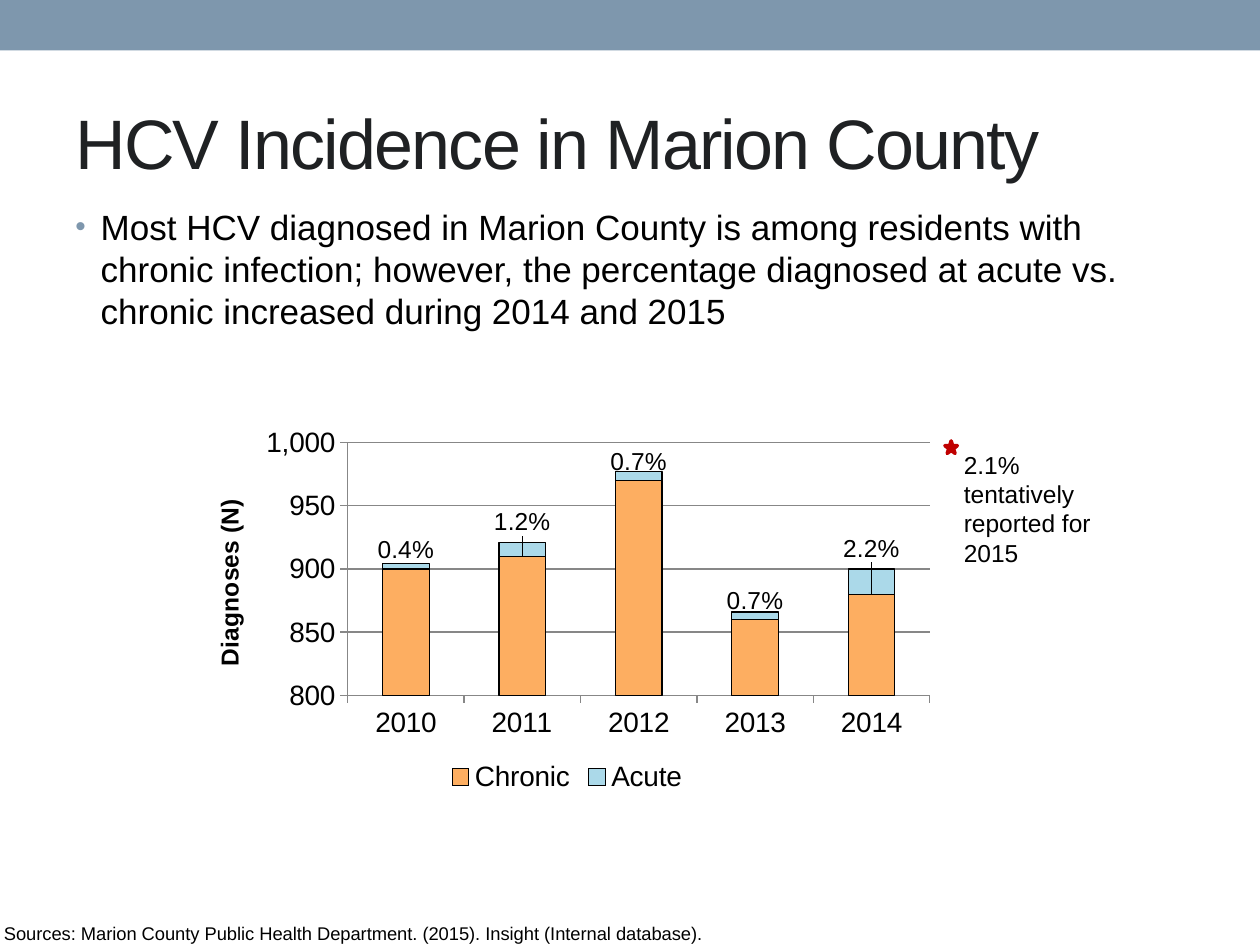
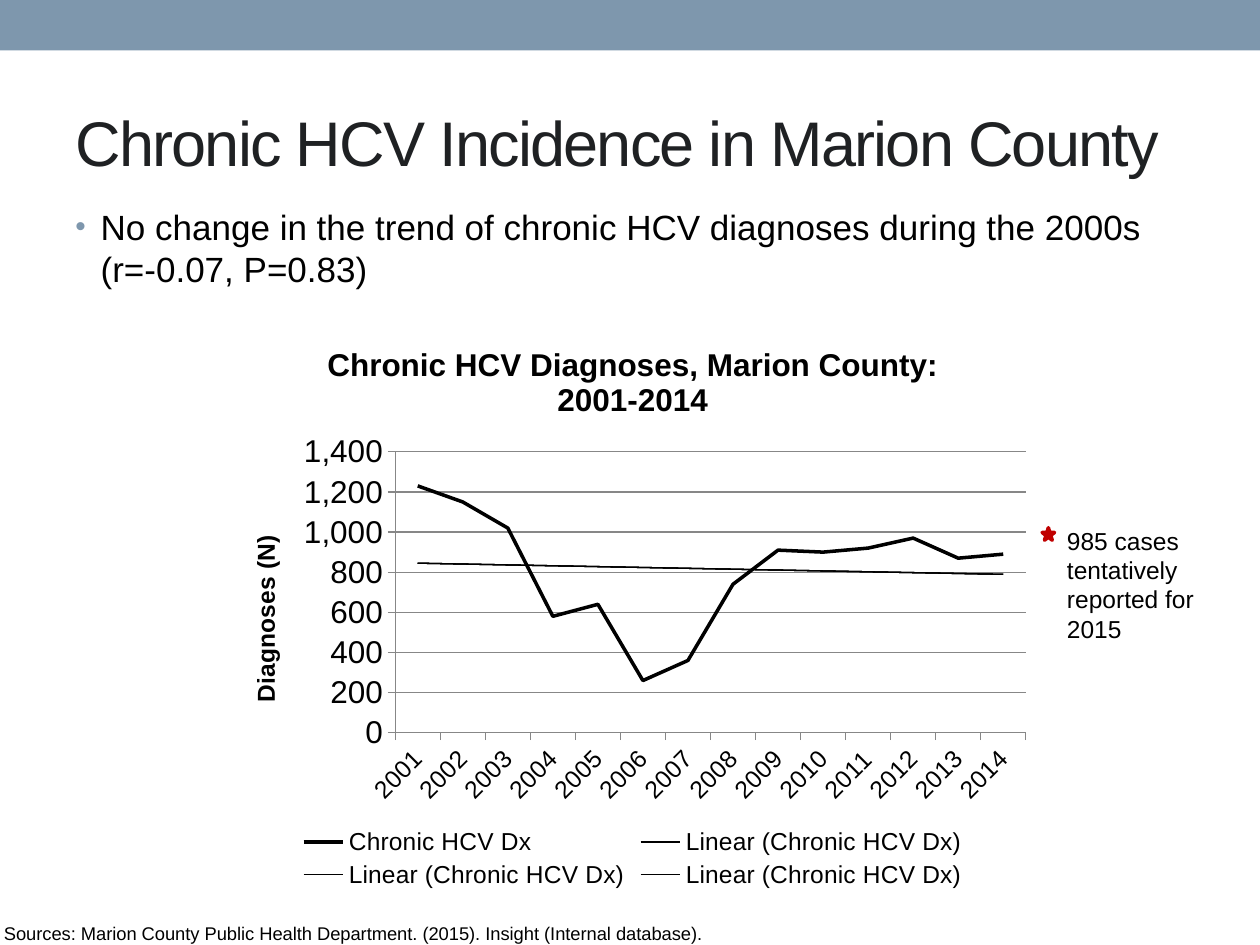
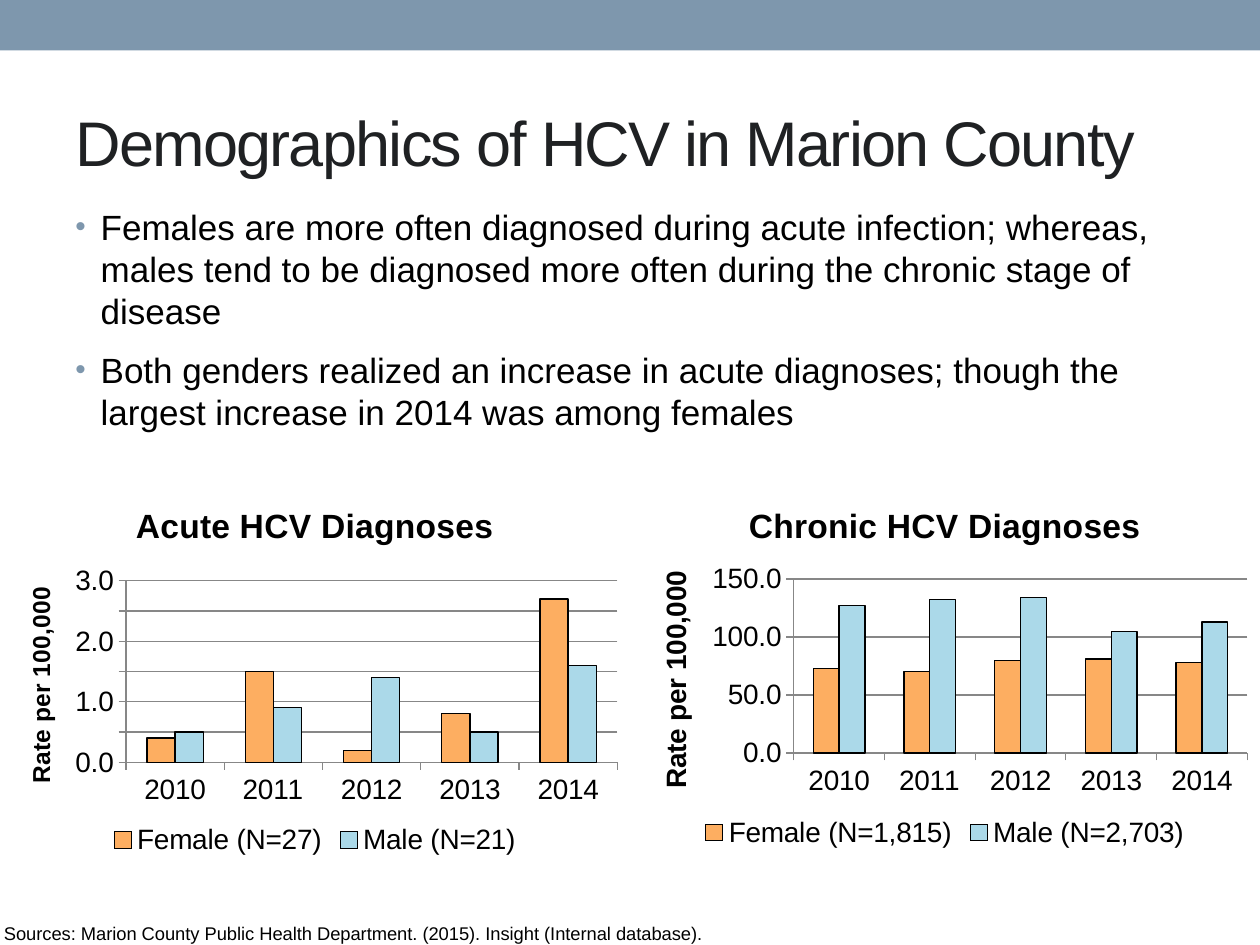
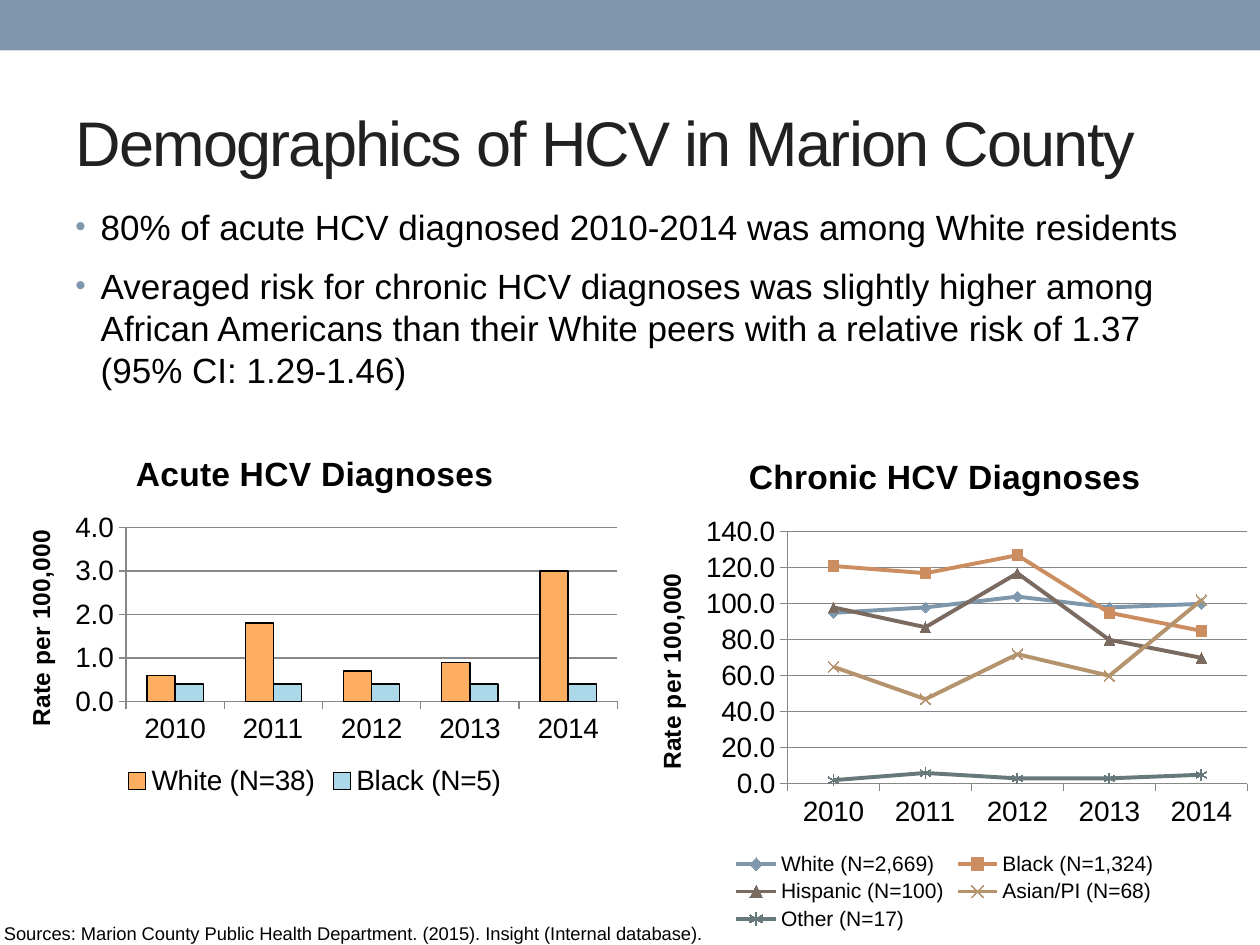
import pptx
import pptx.chart.data
import pptx.dml.color
import pptx.enum.chart
import pptx.enum.shapes
import pptx.enum.text
import pptx.oxml
import pptx.oxml.ns
import pptx.util
from pptx.util import Cm, Pt

FONT = "Arial"
BLACK, SLATE, INK, RED, GRID = "000000", "7E97AD", "1F2123", "C00000", "878787"
STAGE_COLORS = ("FDAE61", "ABD9E9")
RACE_COLORS = (SLATE, "CC8E60", "7A6A60", "B4936D", "67787B")
SLIDE_WIDTH, SLIDE_HEIGHT = 25.4, 19.05
HALF = SLIDE_WIDTH / 2
YEARS = [str(year) for year in range(2010, 2015)]
SOURCE = "Sources: Marion County Public Health Department. (2015). Insight (Internal database)."

CHART = pptx.enum.chart.XL_CHART_TYPE
MARKER = pptx.enum.chart.XL_MARKER_STYLE
RACE_MARKERS = (MARKER.DIAMOND, MARKER.SQUARE, MARKER.TRIANGLE, MARKER.X, MARKER.STAR)


def rgb(value):
    """Turn a hex string into a colour."""
    return pptx.dml.color.RGBColor.from_string(value)


def xml(markup):
    """Parse markup that uses the chart and drawing prefixes."""
    head, mark, tail = markup.partition(">")
    close = "/" if head.endswith("/") else ""
    names = pptx.oxml.ns.nsdecls("a", "c")
    return pptx.oxml.parse_xml(f"{head.rstrip('/')} {names}{close}{mark}{tail}")


def style_font(font, size, color=BLACK, bold=None):
    """Give a font the deck's face with a size and colour."""
    font.name, font.size, font.bold = FONT, Pt(size), bold
    font.color.rgb = rgb(color)


def style_line(line, color, width):
    """Give a line a colour and a width in points."""
    line.color.rgb = rgb(color)
    line.width = Pt(width)


def add_run(paragraph, text, size, color=BLACK, bold=None):
    """Add one styled run to a paragraph."""
    run = paragraph.add_run()
    run.text = text
    style_font(run.font, size, color, bold)
    return run


def add_frame(slide, box):
    """Add a wrapping text box and return its text frame."""
    frame = slide.shapes.add_textbox(*map(Cm, box)).text_frame
    frame.word_wrap = True
    return frame


def add_preset(slide, preset, box, color):
    """Add a flat preset shape filled with one colour."""
    shape = slide.shapes.add_shape(preset, *map(Cm, box))
    shape.shadow.inherit = False
    shape.fill.solid()
    shape.fill.fore_color.rgb = rgb(color)
    shape.line.fill.background()
    return shape


def add_heading(slide, box, text, size):
    """Place the slide title in its box."""
    frame = add_frame(slide, box)
    frame.vertical_anchor = pptx.enum.text.MSO_ANCHOR.MIDDLE
    run = add_run(frame.paragraphs[0], text, size, INK)
    run.font._element.set("spc", "-100")


def add_bullets(slide, box, points):
    """Place the bulleted findings in their box."""
    frame = add_frame(slide, box)
    for index, point in enumerate(points):
        paragraph = frame.add_paragraph() if index else frame.paragraphs[0]
        paragraph.space_before, paragraph.space_after = Pt(4), Pt(6)
        properties = paragraph._p.get_or_add_pPr()
        properties.set("marL", str(Cm(0.51)))
        properties.set("indent", str(-Cm(0.51)))
        properties.append(xml(f'<a:buClr><a:srgbClr val="{SLATE}"/></a:buClr>'))
        properties.append(xml('<a:buSzPct val="85000"/>'))
        properties.append(xml(f'<a:buFont typeface="{FONT}"/>'))
        properties.append(xml('<a:buChar char="•"/>'))
        add_run(paragraph, point, 20)


def add_source(slide, box):
    """Place the source line at the foot of the slide."""
    frame = add_frame(slide, box)
    frame.margin_left = frame.margin_top = frame.margin_right = frame.margin_bottom = 0
    frame.auto_size = pptx.enum.text.MSO_AUTO_SIZE.SHAPE_TO_FIT_TEXT
    add_run(frame.paragraphs[0], SOURCE, 10.5)


def add_star_note(slide, box, star_offset, text):
    """Place a note with a red star offset from its corner."""
    left, top = box[:2]
    across, down = star_offset
    star = add_preset(slide, pptx.enum.shapes.MSO_SHAPE.STAR_5_POINT,
                      (left + across, top + down, 0.25, 0.25), RED)
    style_line(star.line, RED, 2.08)
    frame = add_frame(slide, box)
    frame.auto_size = pptx.enum.text.MSO_AUTO_SIZE.SHAPE_TO_FIT_TEXT
    add_run(frame.paragraphs[0], text, 14)


def start_slide(deck, title, title_size, points, body_height):
    """Add a slide with the band, title, findings and source."""
    slide = deck.slides.add_slide(deck.slide_layouts[6])
    add_preset(slide, pptx.enum.shapes.MSO_SHAPE.RECTANGLE, (0, 0, SLIDE_WIDTH, 1.02), SLATE)
    add_heading(slide, (1.27, 1.48, 23.06, 2.74), title, title_size)
    add_bullets(slide, (1.27, 4.01, 22.86, body_height), points)
    return slide


def style_axes(chart, label, label_size, scale, number_format):
    """Style both axes and set the value scale (low, high, step)."""
    values = chart.value_axis
    values.minimum_scale, values.maximum_scale, values.major_unit = scale
    values.tick_labels.number_format = number_format
    values.tick_labels.number_format_is_linked = False
    style_line(values.major_gridlines.format.line, GRID, 0.75)
    for axis in (values, chart.category_axis):
        axis.major_tick_mark = pptx.enum.chart.XL_TICK_MARK.OUTSIDE
        axis.minor_tick_mark = pptx.enum.chart.XL_TICK_MARK.NONE
        style_line(axis.format.line, GRID, 0.75)
    frame = values.axis_title.text_frame
    add_run(frame.paragraphs[0], label, label_size, bold=True)
    frame._txBody.bodyPr.set("rot", "-5400000")
    frame._txBody.bodyPr.set("vert", "horz")


def set_plot_area(chart, area):
    """Fix the inner plot area as fractions of the chart."""
    parts = "".join(f'<c:{key} val="{value}"/>' for key, value in zip("xywh", area))
    layout = xml('<c:layout><c:manualLayout><c:layoutTarget val="inner"/>'
                 f'<c:xMode val="edge"/><c:yMode val="edge"/>{parts}'
                 '</c:manualLayout></c:layout>')
    plot_area = chart._chartSpace.chart.plotArea
    for old in plot_area.findall(pptx.oxml.ns.qn("c:layout")):
        plot_area.remove(old)
    plot_area.insert(0, layout)


def add_chart(slide, box, kind, years, groups, area, scale, label, title=None,
              title_size=19.2, size=16, label_size=14, legend_size=16,
              number_format="#,##0.0"):
    """Place a chart with its axes, title and legend in a box."""
    data = pptx.chart.data.CategoryChartData()
    data.categories = years
    for name, values in groups:
        data.add_series(name, values)
    chart = slide.shapes.add_chart(kind, *map(Cm, box), data).chart
    style_font(chart.font, size)
    chart.has_title = title is not None
    if title:
        add_run(chart.chart_title.text_frame.paragraphs[0], title, title_size, bold=True)
    chart.has_legend = True
    chart.legend.position = pptx.enum.chart.XL_LEGEND_POSITION.BOTTOM
    chart.legend.include_in_layout = False
    style_font(chart.legend.font, legend_size)
    chart.plots[0].vary_by_categories = False
    style_axes(chart, label, label_size, scale, number_format)
    set_plot_area(chart, area)
    return chart


def style_columns(chart, overlap=0):
    """Colour outlined columns and set their spacing."""
    plot = chart.plots[0]
    plot.gap_width, plot.overlap = 150, overlap
    for group, color in zip(plot.series, STAGE_COLORS):
        group.format.fill.solid()
        group.format.fill.fore_color.rgb = rgb(color)
        style_line(group.format.line, BLACK, 0.75)


def label_shares(acute, shares):
    """Label acute columns with their share, raised by a fraction, without leader lines."""
    for index, (share, rise) in enumerate(shares):
        label = acute.points[index].data_label
        add_run(label.text_frame.paragraphs[0], share, 14)
        label.position = pptx.enum.chart.XL_LABEL_POSITION.INSIDE_BASE
        if rise:
            element = label._get_or_add_dLbl()
            element.find(pptx.oxml.ns.qn("c:idx")).addnext(xml(
                '<c:layout><c:manualLayout><c:x val="0"/>'
                f'<c:y val="{-rise}"/></c:manualLayout></c:layout>'))
    acute._element.find(pptx.oxml.ns.qn("c:dLbls")).append(xml(
        '<c:extLst><c:ext uri="{CE6537A1-D6FC-4f65-9D91-7224C49458BB}" '
        'xmlns:c15="http://schemas.microsoft.com/office/drawing/2012/chart">'
        '<c15:showLeaderLines val="0"/></c:ext></c:extLst>'))


def add_trends(chart, widths):
    """Add a linear trend per width; the legend lists the last one."""
    categories = chart.plots[0].series[0]._element.find(pptx.oxml.ns.qn("c:cat"))
    for width in widths:
        categories.addprevious(xml(
            f'<c:trendline><c:spPr><a:ln w="{Pt(width)}"><a:solidFill>'
            f'<a:srgbClr val="{BLACK}"/></a:solidFill></a:ln></c:spPr>'
            '<c:trendlineType val="linear"/><c:dispRSqr val="0"/>'
            '<c:dispEq val="0"/></c:trendline>'))
    position = chart.legend._element.find(pptx.oxml.ns.qn("c:legendPos"))
    for index in range(len(widths) - 1, 0, -1):
        position.addnext(xml(f'<c:legendEntry><c:idx val="{index}"/>'
                             '<c:delete val="1"/></c:legendEntry>'))


def add_rate_columns(slide, box, title, groups, area, scale, label_size=14):
    """Place a clustered column chart of yearly rates."""
    chart = add_chart(slide, box, CHART.COLUMN_CLUSTERED, YEARS, groups, area, scale,
                      "Rate per 100,000", title, label_size=label_size)
    style_columns(chart)


def add_race_lines(slide, box, groups):
    """Place the line chart of chronic rates by race."""
    chart = add_chart(slide, box, CHART.LINE_MARKERS, YEARS, groups,
                      (0.25, 0.2, 0.73, 0.5), (0, 140, 20), "Rate per 100,000",
                      "Chronic HCV Diagnoses", legend_size=12)
    for group, color, marker in zip(chart.plots[0].series, RACE_COLORS, RACE_MARKERS):
        group.smooth = False
        style_line(group.format.line, color, 2.25)
        group.marker.style, group.marker.size = marker, 6
        group.marker.format.fill.solid()
        group.marker.format.fill.fore_color.rgb = rgb(color)
        style_line(group.marker.format.line, color, 0.75)


def build_incidence(deck):
    """Build the slide on chronic and acute incidence."""
    slide = start_slide(deck, "HCV Incidence in Marion County", 40, [
        "Most HCV diagnosed in Marion County is among residents with chronic infection; "
        "however, the percentage diagnosed at acute vs. chronic increased during 2014 and 2015",
    ], 3.61)
    chart = add_chart(slide, (3.81, 8.46, 15.24, 7.62), CHART.COLUMN_STACKED, YEARS,
                      [("Chronic", (900, 910, 970, 860, 880)), ("Acute", (4, 11, 7, 6, 20))],
                      (0.21, 0.06, 0.77, 0.67), (800, 1000, 50), "Diagnoses (N)",
                      number_format="#,##0")
    style_columns(chart, overlap=100)
    label_shares(chart.plots[0].series[1], [
        ("0.4%", 0), ("1.2%", 0.04), ("0.7%", 0), ("0.7%", 0), ("2.2%", 0.07)])
    add_star_note(slide, (19.18, 8.94, 3.51, 2.64), (-0.13, -0.05),
                  "2.1% tentatively reported for 2015")
    return slide


def build_chronic_trend(deck):
    """Build the slide on the chronic trend."""
    slide = start_slide(deck, "Chronic HCV Incidence in Marion County", 36, [
        "No change in the trend of chronic HCV diagnoses during the 2000s (r=-0.07, P=0.83)",
    ], 2.54)
    diagnoses = (1230, 1150, 1020, 580, 640, 260, 360, 740, 910, 900, 920, 970, 870, 890)
    chart = add_chart(slide, (4.5, 6.45, 16.51, 11.56), CHART.LINE,
                      [str(year) for year in range(2001, 2015)],
                      [("Chronic HCV Dx", diagnoses)],
                      (0.21, 0.23, 0.77, 0.49), (0, 1400, 200), "Diagnoses (N)",
                      "Chronic HCV Diagnoses, Marion County: 2001-2014", title_size=18,
                      size=12, legend_size=14, number_format="#,##0")
    style_font(chart.value_axis.tick_labels.font, 18)
    style_font(chart.category_axis.tick_labels.font, 14)
    chart.category_axis._element.txPr.bodyPr.set("rot", "-2700000")
    chronic = chart.plots[0].series[0]
    chronic.smooth = False
    style_line(chronic.format.line, BLACK, 2)
    add_trends(chart, (0.75, 0.75, 0.75))
    add_star_note(slide, (21.26, 10.47, 3.51, 2.64), (-0.25, 0.17),
                  "985 cases tentatively reported for 2015")
    return slide


def build_gender(deck):
    """Build the slide on rates by gender."""
    slide = start_slide(deck, "Demographics of HCV in Marion County", 36, [
        "Females are more often diagnosed during acute infection; whereas, males tend to be "
        "diagnosed more often during the chronic stage of disease",
        "Both genders realized an increase in acute diagnoses; though the largest increase "
        "in 2014 was among females",
    ], 4.44)
    top = 9.73
    add_rate_columns(slide, (0, top, HALF, 7.62), "Acute HCV Diagnoses",
                     [("Female (N=27)", (0.4, 1.5, 0.2, 0.8, 2.7)),
                      ("Male (N=21)", (0.5, 0.9, 1.4, 0.5, 1.6))],
                     (0.2, 0.26, 0.78, 0.48), (0, 3, 0.5))
    add_rate_columns(slide, (HALF, top, HALF, 7.47), "Chronic HCV Diagnoses",
                     [("Female (N=1,815)", (73, 70, 80, 81, 78)),
                      ("Male (N=2,703)", (127, 132, 134, 105, 113))],
                     (0.26, 0.26, 0.72, 0.47), (0, 150, 50), label_size=16)
    return slide


def build_race(deck):
    """Build the slide on rates by race."""
    slide = start_slide(deck, "Demographics of HCV in Marion County", 36, [
        "80% of acute HCV diagnosed 2010-2014 was among White residents",
        "Averaged risk for chronic HCV diagnoses was slightly higher among African Americans "
        "than their White peers with a relative risk of 1.37 (95% CI: 1.29-1.46)",
    ], 4.44)
    top = 8.69
    add_rate_columns(slide, (0, top, HALF, 7.47), "Acute HCV Diagnoses",
                     [("White (N=38)", (0.6, 1.8, 0.7, 0.9, 3.0)),
                      ("Black (N=5)", (0.4, 0.4, 0.4, 0.4, 0.4))],
                     (0.2, 0.26, 0.78, 0.47), (0, 4, 1))
    add_race_lines(slide, (HALF, top, HALF, 10.16), [
        ("White (N=2,669)", (95, 98, 104, 98, 100)),
        ("Black (N=1,324)", (121, 117, 127, 95, 85)),
        ("Hispanic (N=100)", (98, 87, 117, 80, 70)),
        ("Asian/PI (N=68)", (65, 47, 72, 60, 102)),
        ("Other (N=17)", (2, 6, 3, 3, 5)),
    ])
    return slide


def main():
    """Build the deck and save it."""
    deck = pptx.Presentation()
    deck.slide_width, deck.slide_height = Cm(SLIDE_WIDTH), Cm(SLIDE_HEIGHT)
    for build in (build_incidence, build_chronic_trend, build_gender, build_race):
        add_source(build(deck), (0.08, 18.6, 25.12, 0.46))
    deck.save("out.pptx")


if __name__ == "__main__":
    main()
